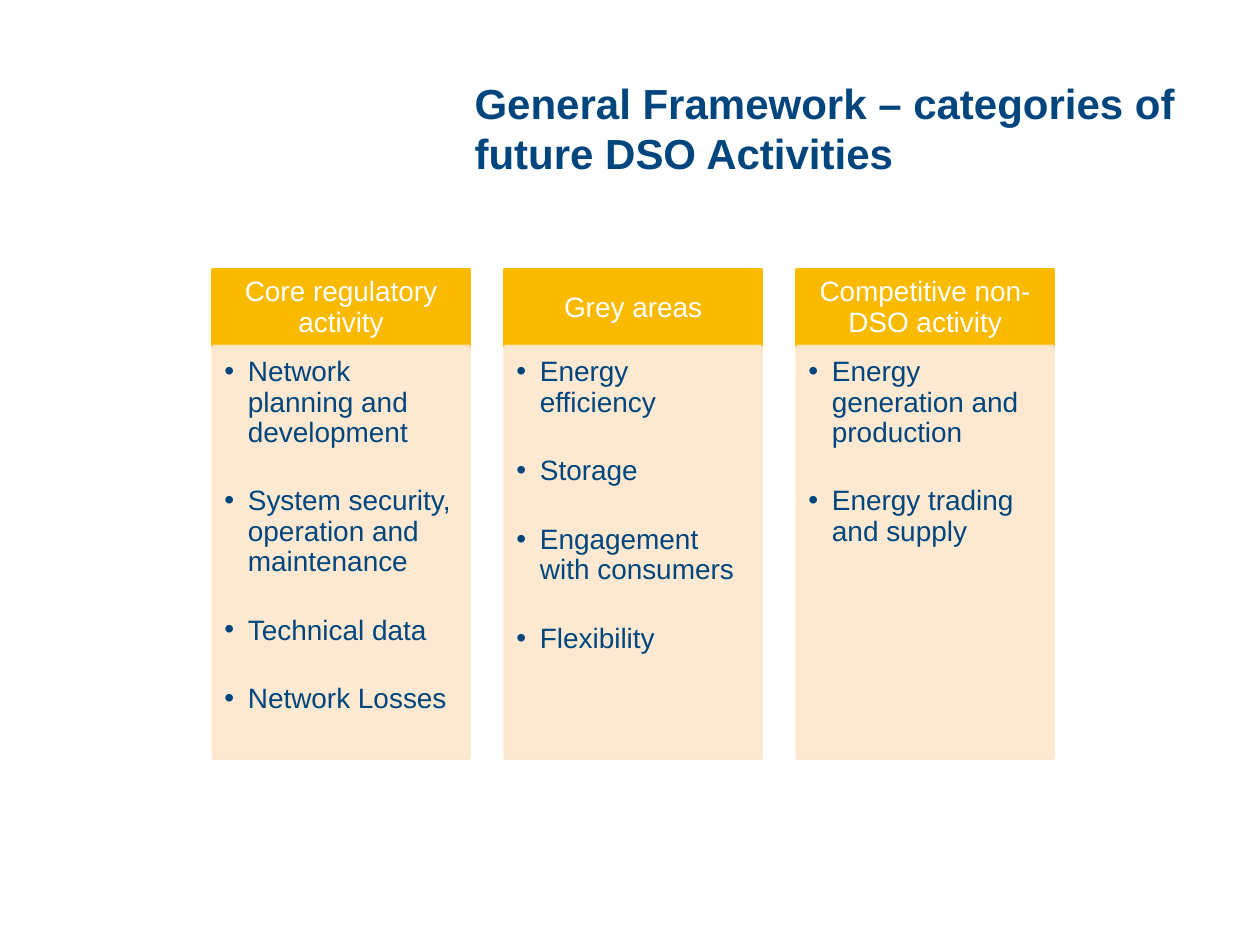
from lxml import etree
from pptx import Presentation
from pptx.dml.color import RGBColor
from pptx.enum.shapes import MSO_SHAPE
from pptx.enum.text import MSO_ANCHOR, PP_ALIGN
from pptx.oxml.ns import qn
from pptx.util import Pt

RECTANGLE = MSO_SHAPE.RECTANGLE
TOP, MIDDLE = MSO_ANCHOR.TOP, MSO_ANCHOR.MIDDLE
LEFT, CENTER = PP_ALIGN.LEFT, PP_ALIGN.CENTER

NAVY = RGBColor(0x00, 0x45, 0x7D)
AMBER = RGBColor(0xFA, 0xBA, 0x00)
CREAM = RGBColor(0xFD, 0xE7, 0xCC)
WHITE = RGBColor(0xFF, 0xFF, 0xFF)

FONT = "Arial"
TITLE_ONLY_LAYOUT = 5
BULLET_INDENT = 13.5

CATEGORIES = [
    ("Core regulatory activity", [
        "Network planning and development",
        "System security, operation and maintenance",
        "Technical data",
        "Network Losses",
    ]),
    ("Grey areas", [
        "Energy efficiency",
        "Storage",
        "Engagement with consumers",
        "Flexibility",
    ]),
    ("Competitive non-DSO activity", [
        "Energy generation and production",
        "Energy trading and supply",
    ]),
]


def style_font(font, size, color, bold=False):
    font.name = FONT
    font.size = Pt(size)
    font.bold = bold
    font.color.rgb = color


def add_bullet(paragraph):
    properties = paragraph._p.get_or_add_pPr()
    properties.set("marL", str(Pt(BULLET_INDENT)))
    properties.set("indent", str(Pt(-BULLET_INDENT)))
    etree.SubElement(properties, qn("a:buFont"), typeface=FONT)
    etree.SubElement(properties, qn("a:buChar"), char="•")


def set_opacity(shape, percent):
    for color in shape._element.spPr.iter(qn("a:srgbClr")):
        etree.SubElement(color, qn("a:alpha"), val=str(percent * 1000))


def set_frame(frame, anchor, insets):
    frame.word_wrap = True
    frame.vertical_anchor = anchor
    (frame.margin_left, frame.margin_top,
     frame.margin_right, frame.margin_bottom) = map(Pt, insets)


def add_panel(slide, left, top, width, height, color):
    shape = slide.shapes.add_shape(RECTANGLE, Pt(left), Pt(top), Pt(width), Pt(height))
    shape.shadow.inherit = False
    shape.fill.solid()
    shape.fill.fore_color.rgb = color
    shape.line.color.rgb = color
    shape.line.width = Pt(2)
    return shape


def add_title(slide, left, top, width, height):
    title = slide.shapes.title
    title.left, title.top, title.width, title.height = map(Pt, (left, top, width, height))
    set_frame(title.text_frame, MIDDLE, (7.2, 3.6, 7.2, 3.6))
    paragraph = title.text_frame.paragraphs[0]
    paragraph.text = "General Framework – categories of future DSO Activities"
    paragraph.alignment = LEFT
    style_font(paragraph.font, 24, NAVY, bold=True)


def add_category(slide, left, top, width, height, heading, activities):
    header_height = 44

    # Heading
    header = add_panel(slide, left, top, width, header_height, AMBER)
    set_frame(header.text_frame, MIDDLE, (8.6, 5, 8.6, 5))
    paragraph = header.text_frame.paragraphs[0]
    paragraph.text = heading
    paragraph.alignment = CENTER
    paragraph.line_spacing = 0.9
    style_font(paragraph.font, 16, WHITE)

    # Activities
    body = add_panel(slide, left, top + header_height, width, height - header_height, CREAM)
    set_opacity(body, 90)
    frame = body.text_frame
    set_frame(frame, TOP, (6.4, 6.4, 8.6, 10))
    for index, activity in enumerate(activities):
        paragraph = frame.add_paragraph() if index else frame.paragraphs[0]
        paragraph.text = activity
        paragraph.alignment = LEFT
        paragraph.line_spacing = 0.9
        paragraph.space_after = Pt(22)
        add_bullet(paragraph)
        style_font(paragraph.font, 16, NAVY)


def add_categories(slide, left, top, width, height):
    gap = 20.6
    column_width = (width - gap * (len(CATEGORIES) - 1)) / len(CATEGORIES)
    for index, (heading, activities) in enumerate(CATEGORIES):
        column_left = left + index * (column_width + gap)
        add_category(slide, column_left, top, column_width, height, heading, activities)


def main():
    presentation = Presentation()
    presentation.slide_width, presentation.slide_height = Pt(720), Pt(540)
    slide = presentation.slides.add_slide(presentation.slide_layouts[TITLE_ONLY_LAYOUT])
    add_title(slide, 264, 34.6, 420, 77)
    add_categories(slide, 121.8, 154, 480, 279.4)
    presentation.save("out.pptx")


if __name__ == "__main__":
    main()
